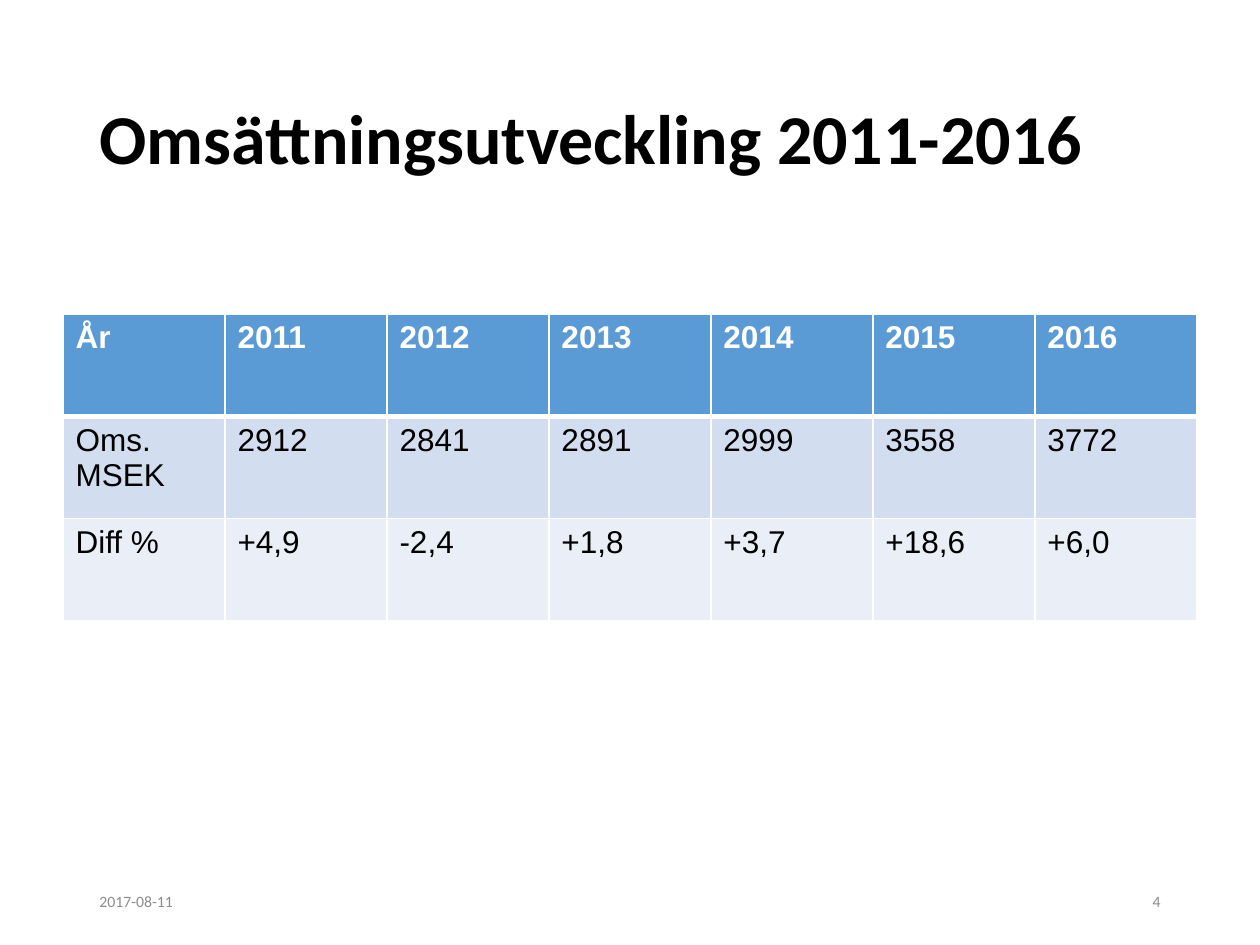
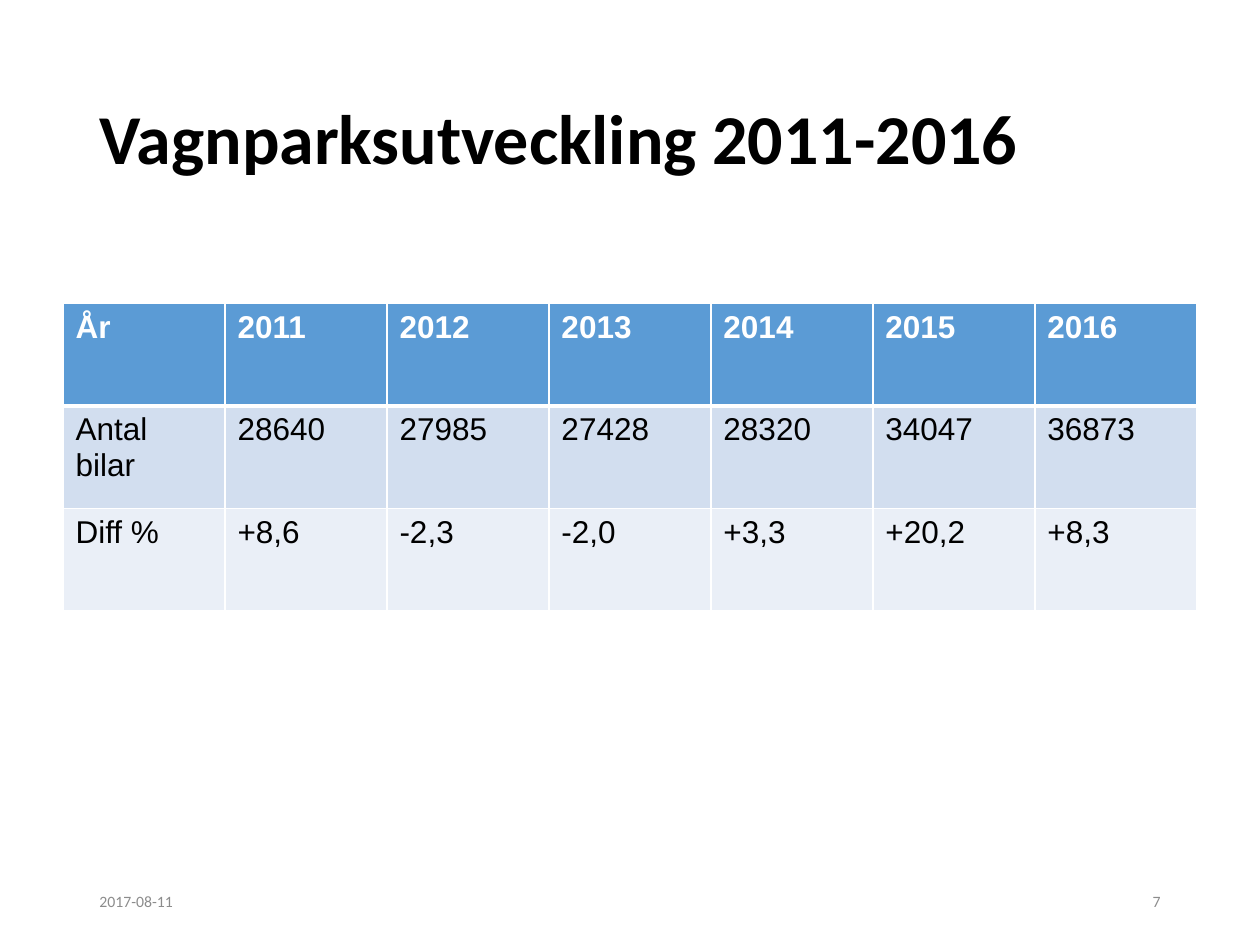
from dataclasses import dataclass

from lxml.etree import SubElement
from pptx import Presentation
from pptx.dml.color import RGBColor
from pptx.enum.text import MSO_ANCHOR as Anchor, PP_ALIGN as Align
from pptx.oxml.ns import qn
from pptx.slide import Slide
from pptx.table import _Cell as Cell
from pptx.text.text import _Paragraph as Paragraph
from pptx.util import Emu, Pt

EMU_PER_PX = 9144
COLORS = {
    "title": "000000",
    "body": "000000",
    "white": "FFFFFF",
    "footer": "8C8C8C",
    "header": "5B9BD5",
    "band_dark": "D2DEEF",
    "band_light": "EAEFF7",
}
YEARS = ("2011", "2012", "2013", "2014", "2015", "2016")
DATE = "2017-08-11"
TABLE_LEFT, TABLE_WIDTH, TABLE_HEIGHT = 50, 900, 244
THIN, THICK = 1, 3


@dataclass(frozen=True)
class TextStyle:
    font: str
    size: int
    color: str
    bold: bool = False
    align: Align = Align.LEFT
    line_spacing: float = 1.0


@dataclass(frozen=True)
class Box:
    left: int
    top: int
    width: int
    height: int
    style: TextStyle


@dataclass(frozen=True)
class RowStyle:
    fill: str
    text: TextStyle
    top_border: int
    bottom_border: int


@dataclass(frozen=True)
class TrendSlide:
    title: str
    number: str
    table_top: int
    measure: str
    values: tuple[str, ...]
    changes: tuple[str, ...]


TITLE = Box(69, 40, 862, 145, TextStyle("Calibri", 40, "title", True, line_spacing=0.9))
DATE_BOX = Box(69, 695, 225, 40, TextStyle("Calibri", 9, "footer"))
NUMBER_BOX = Box(706, 695, 225, 40, TextStyle("Calibri", 9, "footer", align=Align.RIGHT))
HEADER_TEXT = TextStyle("Arial", 18, "white", True)
BODY_TEXT = TextStyle("Arial", 18, "body")
ROW_STYLES = (
    RowStyle("header", HEADER_TEXT, THIN, THICK),
    RowStyle("band_dark", BODY_TEXT, THICK, THIN),
    RowStyle("band_light", BODY_TEXT, THIN, THIN),
)
TREND_SLIDES = (
    TrendSlide(
        "Omsättningsutveckling 2011-2016", "4", 249, "Oms. MSEK",
        ("2912", "2841", "2891", "2999", "3558", "3772"),
        ("+4,9", "-2,4", "+1,8", "+3,7", "+18,6", "+6,0"),
    ),
    TrendSlide(
        "Vagnparksutveckling 2011-2016", "7", 241, "Antal bilar",
        ("28640", "27985", "27428", "28320", "34047", "36873"),
        ("+8,6", "-2,3", "-2,0", "+3,3", "+20,2", "+8,3"),
    ),
)


def px(length: int) -> Emu:
    """Turn pixels into EMU."""
    return Emu(length * EMU_PER_PX)


def color(name: str) -> RGBColor:
    """Look up a named colour."""
    return RGBColor.from_string(COLORS[name])


def style_paragraph(paragraph: Paragraph, style: TextStyle) -> None:
    """Apply a text style to a paragraph and its runs."""
    paragraph.alignment = style.align
    paragraph.line_spacing = style.line_spacing
    for run in paragraph.runs:
        run.font.name = style.font
        run.font.size = Pt(style.size)
        run.font.bold = style.bold
        run.font.color.rgb = color(style.color)


def add_text(slide: Slide, box: Box, text: str) -> None:
    """Add a vertically centred text box."""
    shape = slide.shapes.add_textbox(px(box.left), px(box.top), px(box.width), px(box.height))
    text_frame = shape.text_frame
    text_frame.word_wrap = True
    text_frame.vertical_anchor = Anchor.MIDDLE
    text_frame.text = text
    style_paragraph(text_frame.paragraphs[0], box.style)


def set_borders(cell: Cell, top: int, bottom: int) -> None:
    """Draw white borders around a cell."""
    properties = cell._tc.get_or_add_tcPr()
    for side, width in (("L", THIN), ("R", THIN), ("T", top), ("B", bottom)):
        line = SubElement(properties, qn(f"a:ln{side}"), w=str(Pt(width)))
        fill = SubElement(line, qn("a:solidFill"))
        SubElement(fill, qn("a:srgbClr"), val=COLORS["white"])


def fill_cell(cell: Cell, text: str, style: RowStyle) -> None:
    """Write and format one table cell."""
    cell.text_frame.text = text
    style_paragraph(cell.text_frame.paragraphs[0], style.text)
    set_borders(cell, style.top_border, style.bottom_border)
    cell.fill.solid()
    cell.fill.fore_color.rgb = color(style.fill)


def add_trend_table(slide: Slide, trend: TrendSlide) -> None:
    """Add the table of yearly values and changes."""
    rows = (
        ("År", *YEARS),
        (trend.measure, *trend.values),
        ("Diff %", *trend.changes),
    )
    table = slide.shapes.add_table(
        len(rows), len(rows[0]),
        px(TABLE_LEFT), px(trend.table_top), px(TABLE_WIDTH), px(TABLE_HEIGHT),
    ).table
    for row, texts, style in zip(table.rows, rows, ROW_STYLES):
        for cell, text in zip(row.cells, texts):
            fill_cell(cell, text, style)


def main() -> None:
    """Build and save the presentation."""
    presentation = Presentation()
    presentation.slide_width, presentation.slide_height = px(1000), px(750)
    for trend in TREND_SLIDES:
        slide = presentation.slides.add_slide(presentation.slide_layouts[6])
        add_text(slide, TITLE, trend.title)
        add_trend_table(slide, trend)
        add_text(slide, DATE_BOX, DATE)
        add_text(slide, NUMBER_BOX, trend.number)
    presentation.save("out.pptx")


if __name__ == "__main__":
    main()
